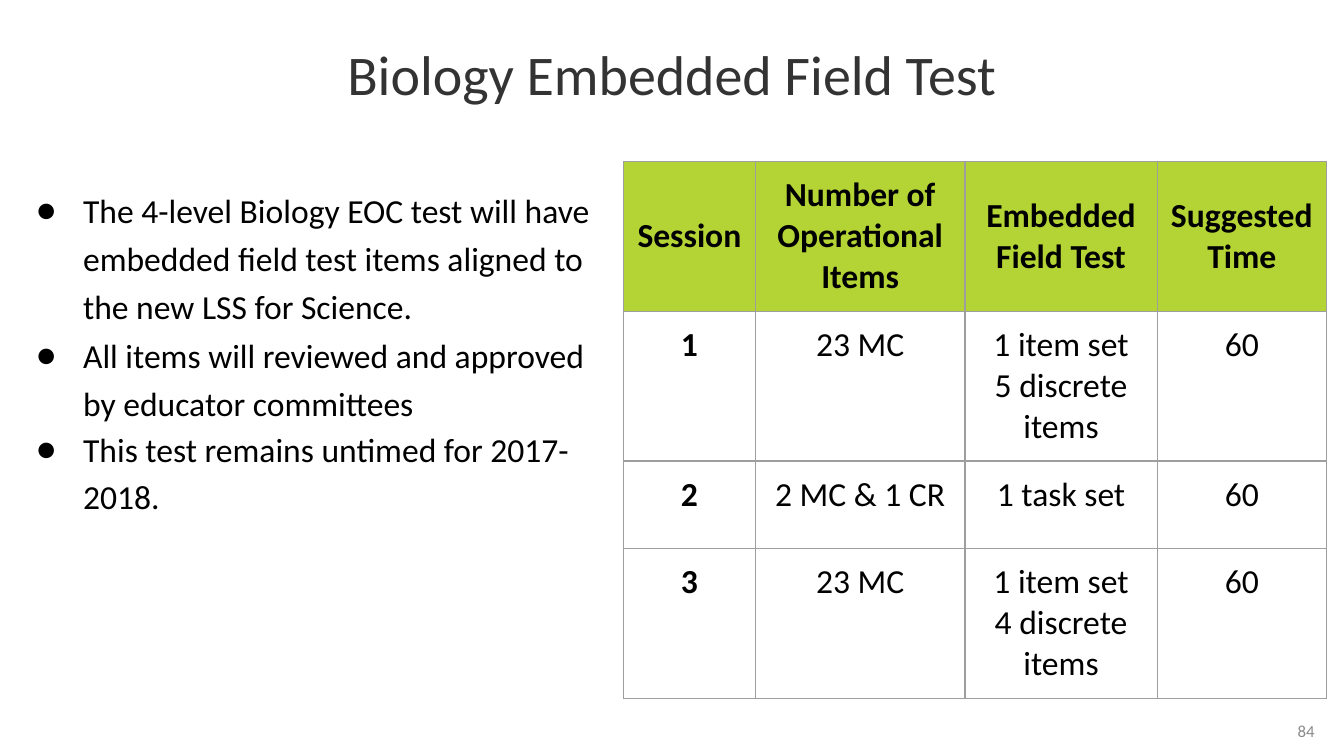
"""Build the Biology Embedded Field Test slide."""
from dataclasses import dataclass

from lxml.etree import SubElement
from pptx import Presentation
from pptx.dml.color import RGBColor
from pptx.enum.text import MSO_ANCHOR, MSO_AUTO_SIZE, PP_ALIGN
from pptx.oxml.ns import qn
from pptx.util import Inches, Pt


@dataclass(frozen=True)
class Theme:
    """Colours, type sizes and spacing."""
    font: str = "Calibri"
    title: str = "333333"
    ink: str = "000000"
    muted: str = "8A8A8A"
    header: str = "B4D334"
    border: str = "9E9E9E"
    title_size: float = 30
    body_size: float = 18
    number_size: float = 9
    border_width: float = 0.75
    inset: float = 1


class FieldTestSlide:
    """Hold the theme and a slide on a grid 100 columns wide and 56.25 rows high."""

    def __init__(self, deck, theme):
        self.theme = theme
        self.column = deck.slide_width / 100
        self.row = deck.slide_height / 56.25
        self.slide = deck.slides.add_slide(deck.slide_layouts[5])

    def box(self, left, top, width, height):
        """Convert a grid area to slide lengths."""
        return (round(left * self.column), round(top * self.row),
                round(width * self.column), round(height * self.row))

    def pad(self, holder):
        """Give a text frame or cell equal insets."""
        inset = round(self.theme.inset * self.column)
        holder.margin_left = holder.margin_right = inset
        holder.margin_top = holder.margin_bottom = inset

    def style(self, paragraph, size, colour, align=PP_ALIGN.LEFT, bold=False):
        """Format one paragraph."""
        paragraph.alignment = align
        font = paragraph.font
        font.name, font.size, font.bold = self.theme.font, Pt(size), bold
        font.color.rgb = RGBColor.from_string(colour)

    def title(self, wording, *area):
        """Fill and place the title."""
        heading = self.slide.shapes.title
        heading.left, heading.top, heading.width, heading.height = self.box(*area)
        frame = heading.text_frame
        frame.text = wording
        frame.auto_size = MSO_AUTO_SIZE.NONE
        frame.vertical_anchor = MSO_ANCHOR.MIDDLE
        self.pad(frame)
        frame.paragraphs[0].line_spacing = 0.9
        self.style(frame.paragraphs[0], self.theme.title_size, self.theme.title, PP_ALIGN.CENTER)

    def bullets(self, points, *area):
        """Add bulleted points, each with its line spacing."""
        frame = self.slide.shapes.add_textbox(*self.box(*area)).text_frame
        frame.word_wrap = True
        self.pad(frame)
        frame.text = "\n".join(wording for wording, _ in points)
        for paragraph, (_, spacing) in zip(frame.paragraphs, points):
            paragraph.line_spacing = spacing
            properties = paragraph._p.get_or_add_pPr()
            properties.set("marL", str(Inches(0.35)))
            properties.set("indent", str(Inches(-0.38)))
            bullet_colour = SubElement(properties, qn("a:buClr"))
            SubElement(bullet_colour, qn("a:srgbClr"), val=self.theme.ink)
            SubElement(properties, qn("a:buFont"), typeface=self.theme.font)
            SubElement(properties, qn("a:buChar"), char="●")
            self.style(paragraph, self.theme.body_size, self.theme.ink)

    def outline(self, cell):
        """Draw the four borders of a cell."""
        properties = cell._tc.get_or_add_tcPr()
        for side in ("lnL", "lnR", "lnT", "lnB"):
            line = SubElement(properties, qn(f"a:{side}"), w=str(Pt(self.theme.border_width)))
            fill = SubElement(line, qn("a:solidFill"))
            SubElement(fill, qn("a:srgbClr"), val=self.theme.border)

    def table(self, rows, widths, heights, left, top):
        """Add a table with a coloured header and a bold first column."""
        area = self.box(left, top, sum(widths), sum(heights))
        grid = self.slide.shapes.add_table(len(rows), len(widths), *area).table
        grid.horz_banding = False
        for column, width in zip(grid.columns, widths):
            column.width = round(width * self.column)
        for row, height in zip(grid.rows, heights):
            row.height = round(height * self.row)
        for r, entries in enumerate(rows):
            for c, wording in enumerate(entries):
                cell = grid.cell(r, c)
                cell.text = wording
                self.pad(cell)
                self.outline(cell)
                if r == 0:
                    cell.vertical_anchor = MSO_ANCHOR.MIDDLE
                    cell.fill.solid()
                    cell.fill.fore_color.rgb = RGBColor.from_string(self.theme.header)
                else:
                    cell.fill.background()
                for paragraph in cell.text_frame.paragraphs:
                    self.style(paragraph, self.theme.body_size, self.theme.ink,
                               PP_ALIGN.CENTER, r == 0 or c == 0)

    def page_number(self, number, *area):
        """Add the page number."""
        frame = self.slide.shapes.add_textbox(*self.box(*area)).text_frame
        frame.word_wrap = True
        frame.vertical_anchor = MSO_ANCHOR.MIDDLE
        frame.text = number
        self.style(frame.paragraphs[0], self.theme.number_size, self.theme.muted, PP_ALIGN.RIGHT)


POINTS = [
    ("The 4-level Biology EOC test will have embedded field test items aligned to "
     "the new LSS for Science.", 1.2),
    ("All items will reviewed and approved by educator committees", 1.2),
    ("This test remains untimed for 2017-2018.", 1.15),
]
SESSIONS = [
    ("Session", "Number of Operational Items", "Embedded Field Test", "Suggested Time"),
    ("1", "23 MC", "1 item set\n5 discrete items", "60"),
    ("2", "2 MC & 1 CR", "1 task set", "60"),
    ("3", "23 MC", "1 item set\n4 discrete items", "60"),
]


def main():
    """Build and save the deck."""
    deck = Presentation()
    deck.slide_width = Inches(10)
    deck.slide_height = deck.slide_width * 9 // 16
    page = FieldTestSlide(deck, Theme())
    page.page_number("84", 74.4, 52.5, 24.4, 3.8)
    page.title("Biology Embedded Field Test", 0, 0, 100, 11.5)
    page.bullets(POINTS, 1.7, 12.5, 44.8, 38.8)
    page.table(SESSIONS, (9.8, 15.6, 14.3, 12.6), (11.15, 11.15, 6.5, 11.15), 46.4, 12)
    deck.save("out.pptx")


if __name__ == "__main__":
    main()
